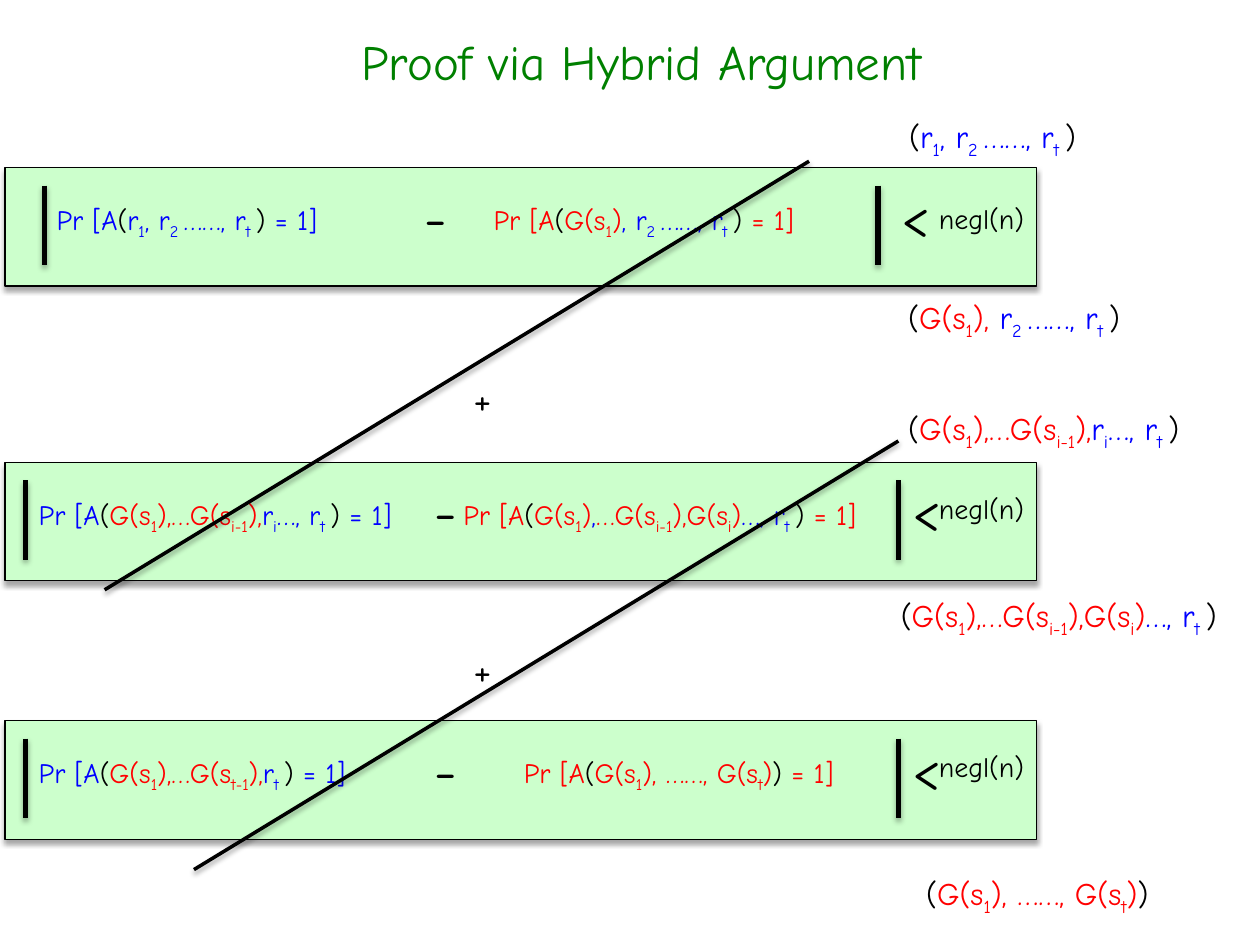
import dataclasses

import lxml.etree
import pptx
import pptx.dml.color
import pptx.enum.shapes
import pptx.enum.text
import pptx.oxml.ns
import pptx.util

Cm = pptx.util.Cm
Pt = pptx.util.Pt


@dataclasses.dataclass(frozen=True)
class Theme:
    font: str = "Comic Neue"
    ink: str = "000000"
    heading: str = "008000"
    random: str = "0000FF"
    pseudo: str = "FF0000"
    band: str = "CCFFCC"
    title_size: int = 28
    hybrid_size: int = 18
    formula_size: int = 16
    operator_size: int = 32
    plus_size: int = 24


class ProofSlide:
    """Draw styled elements on one slide; ~ toggles subscript in text."""

    def __init__(self, slide, theme):
        self.slide = slide
        self.theme = theme

    def add_run(self, paragraph, words, color, size, subscript=False):
        run = paragraph.add_run()
        run.text = words
        for key, value in {"name": self.theme.font, "size": Pt(size)}.items():
            setattr(run.font, key, value)
        run.font.color.rgb = pptx.dml.color.RGBColor.from_string(color)
        if subscript:
            run.font._element.set("baseline", "-25000")

    def title(self, words, left, top, width, height):
        heading = self.slide.shapes.title
        for key, value in {"left": left, "top": top, "width": width, "height": height}.items():
            setattr(heading, key, Cm(value))
        frame = heading.text_frame
        frame.vertical_anchor = pptx.enum.text.MSO_ANCHOR.MIDDLE
        frame.paragraphs[0].alignment = pptx.enum.text.PP_ALIGN.CENTER
        self.add_run(frame.paragraphs[0], words, self.theme.heading, self.theme.title_size)

    def text(self, parts, size, left, top, width, height, wrap=True):
        box = self.slide.shapes.add_textbox(Cm(left), Cm(top), Cm(width), Cm(height))
        frame = box.text_frame
        for key, value in {
            "word_wrap": wrap,
            "vertical_anchor": pptx.enum.text.MSO_ANCHOR.TOP,
            "auto_size": pptx.enum.text.MSO_AUTO_SIZE.SHAPE_TO_FIT_TEXT,
        }.items():
            setattr(frame, key, value)
        for color, words in parts:
            for index, piece in enumerate(words.split("~")):
                if piece:
                    self.add_run(frame.paragraphs[0], piece, color, size, index % 2)

    def band(self, left, top, width, height):
        band = self.slide.shapes.add_shape(
            pptx.enum.shapes.MSO_SHAPE.RECTANGLE, Cm(left), Cm(top), Cm(width), Cm(height)
        )
        band.fill.solid()
        band.fill.fore_color.rgb = pptx.dml.color.RGBColor.from_string(self.theme.band)
        self.outline(band, 0.75)

    def line(self, x1, y1, x2, y2, weight):
        line = self.slide.shapes.add_connector(
            pptx.enum.shapes.MSO_CONNECTOR.STRAIGHT, Cm(x1), Cm(y1), Cm(x2), Cm(y2)
        )
        self.outline(line, weight)

    def outline(self, shape, weight):
        shape.line.color.rgb = pptx.dml.color.RGBColor.from_string(self.theme.ink)
        shape.line.width = Pt(weight)
        qn = pptx.oxml.ns.qn
        effects = lxml.etree.SubElement(shape._element.spPr, qn("a:effectLst"))
        shadow = lxml.etree.SubElement(
            effects, qn("a:outerShdw"),
            blurRad="40000", dist="23000", dir="5400000", rotWithShape="0",
        )
        color = lxml.etree.SubElement(shadow, qn("a:srgbClr"), val=self.theme.ink)
        lxml.etree.SubElement(color, qn("a:alpha"), val="35000")

    def inequality(self, top, first, second, bars, minus_left, less_left, bound_offset):
        theme = self.theme
        black = theme.ink
        self.band(0.1, top, 20.8, 2.39)
        for (hybrid, left, width), color in ((first, theme.random), (second, theme.pseudo)):
            formula = [(color, "Pr [A"), *hybrid, (color, " = 1]")]
            self.text(formula, theme.formula_size, left, top + 0.58, width, 0.94)
        for x in bars:
            self.line(x, top + 0.36, x, top + 1.96, 3)
        sign_top = top + 0.15
        self.text([(black, "-")], theme.operator_size, minus_left, sign_top, 1.07, 1.63, False)
        self.text([(black, "<")], theme.operator_size, less_left, sign_top, 1.57, 1.63)
        self.text([(black, " negl(n)")], theme.formula_size, 18.49, top + bound_offset, 3.2, 0.94)


def main():
    theme = Theme()
    black, blue, red = theme.ink, theme.random, theme.pseudo

    def tuple_of(*parts):
        return [(black, "("), *parts, (black, ")")]

    all_random = tuple_of((blue, "r~1~, r~2 ~……, r~t ~"))
    one_pseudo = tuple_of((red, "G(s~1~),"), (blue, " r~2 ~……, r~t ~"))
    before_i = tuple_of((red, "G(s~1~),…G(s~i-1~),"), (blue, "r~i~…, r~t ~"))
    through_i = tuple_of((red, "G(s~1~),…G(s~i-1~),G(s~i~)"), (blue, "…, r~t ~"))
    all_pseudo = tuple_of((red, "G(s~1~), ……, G(s~t~)"))
    one_pseudo_inline = tuple_of((red, "G(s~1~)"), (blue, ", r~2 ~……, r~t ~"))
    through_i_inline = tuple_of(
        (red, "G(s~1~)"), (blue, ","), (red, "…G(s~i-1~),G(s~i~)"), (blue, "…, r~t ~")
    )
    last_random = tuple_of((red, "G(s~1~),…G(s~t-1~),"), (blue, "r~t ~"))

    deck = pptx.Presentation()
    deck.slide_width, deck.slide_height = Cm(25.4), Cm(19.05)
    proof = ProofSlide(deck.slides.add_slide(deck.slide_layouts[5]), theme)
    proof.title("Proof via Hybrid Argument", 1.5, 0.13, 22.86, 2.21)

    for hybrid, left, top, width in (
        (all_random, 18.08, 2.24, 4.83),
        (one_pseudo, 18.06, 5.89, 5.61),
        (before_i, 18.06, 8.13, 6.93),
        (through_i, 17.91, 11.89, 8),
        (all_pseudo, 18.42, 17.5, 6.68),
    ):
        proof.text(hybrid, theme.hybrid_size, left, top, width, 1.02)

    narrow = ((0.89, 17.7), 8.31, 17.93, 0.56)
    wide = ((0.51, 18.11), 8.51, 18.14, 0.46)
    for top, first, second, spacing in (
        (3.38, (all_random, 0.89, 7.01), (one_pseudo_inline, 9.7, 8), narrow),
        (9.32, (before_i, 0.53, 8.79), (through_i_inline, 9.09, 9.6), wide),
        (14.53, (last_random, 0.53, 8.59), (all_pseudo, 10.31, 7.8), wide),
    ):
        proof.inequality(top, first, second, *spacing)

    for top in (7.39, 12.85):
        proof.text([(black, "+")], theme.plus_size, 9.3, top, 1.4, 1.27)
    for x, y in ((18.11, 8.89), (16.31, 3.25)):
        proof.line(x, y, x - 14.2, y + 8.64, 2)

    deck.save("out.pptx")


if __name__ == "__main__":
    main()
